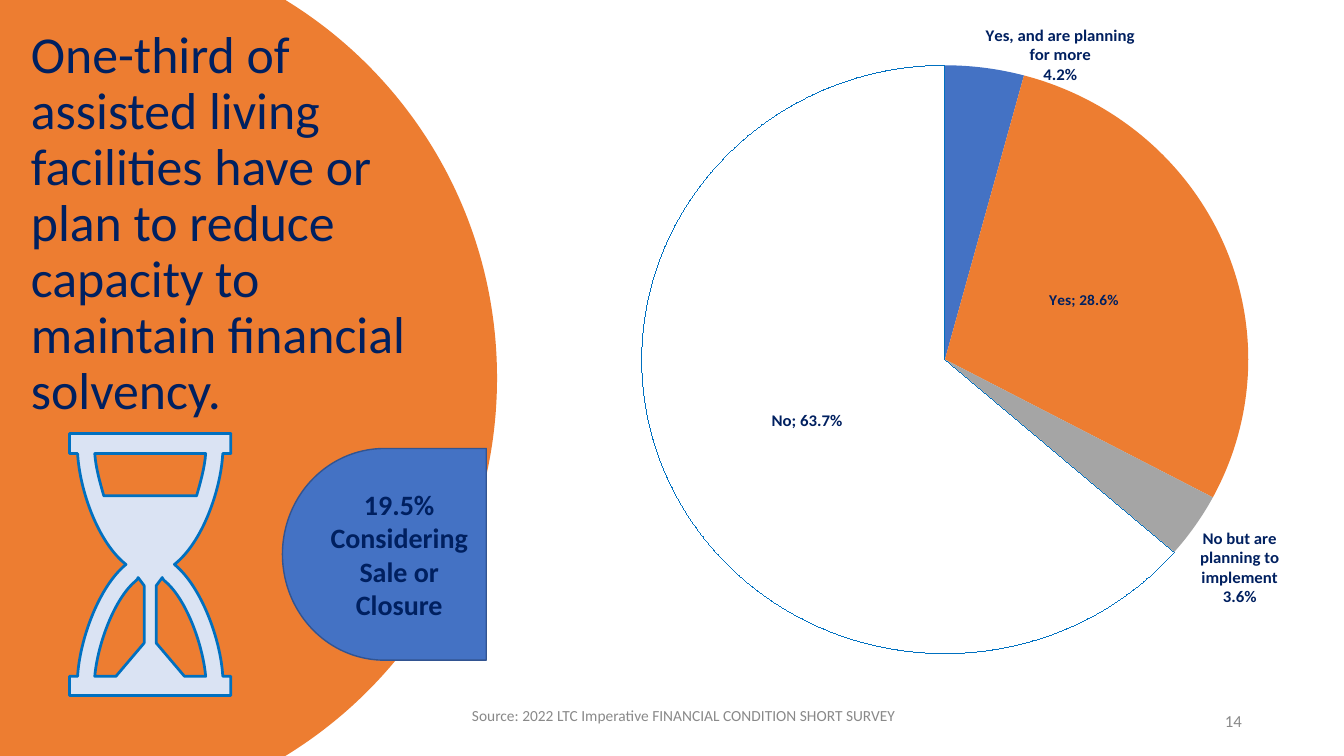
from lxml import etree
from pptx import Presentation
from pptx.chart.data import CategoryChartData
from pptx.dml.color import RGBColor
from pptx.enum.chart import XL_CHART_TYPE, XL_LABEL_POSITION
from pptx.enum.shapes import MSO_SHAPE
from pptx.enum.text import MSO_ANCHOR, MSO_AUTO_SIZE, PP_ALIGN
from pptx.oxml import parse_xml
from pptx.oxml.ns import nsdecls, qn
from pptx.util import Inches, Pt

WIDE, HIGH = Inches(13.33), Inches(7.5)
UNIT = Inches(0.01)
NAVY, ORANGE, BLUE, GRAY = "002060", "ED7D31", "4472C4", "A5A5A5"
EDGE, PALE, DIM = "0070C0", "DAE3F3", "898989"
OUT, MID = XL_LABEL_POSITION.OUTSIDE_END, XL_LABEL_POSITION.CENTER

# category, share, fill, label place, separator, label size
SLICES = [
    ("Yes, and are planning for more", 0.042, BLUE, OUT, "\n", 12),
    ("Yes", 0.286, ORANGE, MID, "; ", 11),
    ("No but are planning to implement", 0.036, GRAY, OUT, "\n", 12),
    ("No", 0.637, None, MID, "; ", 12),
]


def area(left, top, width, height):
    """Turn percentages of the slide into lengths."""
    return (int(WIDE * left / 100), int(HIGH * top / 100),
            int(WIDE * width / 100), int(HIGH * height / 100))


def tint(target, color):
    """Colour a fill or a font; None leaves a fill empty."""
    if color is None:
        target.background()
        return
    if hasattr(target, "solid"):
        target.solid()
        target = target.fore_color
    else:
        target = target.color
    target.rgb = RGBColor.from_string(color)


def style(font, size, color, bold=False):
    font.name, font.size, font.bold = "Calibri", Pt(size), bold
    tint(font, color)


def paint(shape, fill, line=None, width=1):
    shape.shadow.inherit = False
    tint(shape.fill, fill)
    tint(shape.line.fill, line)
    if line:
        shape.line.width = Pt(width)


def write(shape, text, size, color, align=PP_ALIGN.LEFT, bold=False, after=0):
    frame = shape.text_frame
    frame.text = text
    frame.word_wrap = True
    frame.auto_size = MSO_AUTO_SIZE.NONE
    frame.vertical_anchor = MSO_ANCHOR.MIDDLE
    para = frame.paragraphs[0]
    para.alignment, para.space_after = align, Pt(after)
    style(para.runs[0].font, size, color, bold)
    return para


def trace(*steps):
    """List (x, y, is handle); a step of six numbers is a cubic curve."""
    points = []
    for step in steps:
        last = len(step) - 2
        points += [(step[i], step[i + 1], i < last) for i in range(0, last + 1, 2)]
    return points


def mirror(points):
    return [(-x, y, bend) for x, y, bend in reversed(points)]


def curve(shape, bends):
    """Merge each pair of handles and the point after it into one curve."""
    route = next(shape.element.iter(qn("a:path")))
    nodes = [n for n in route if n.tag != qn("a:close")]
    bow = None
    for node, bend, prior in zip(nodes, bends, [False] + bends):
        if bend and not prior:
            bow = etree.Element(qn("a:cubicBezTo"))
            node.addprevious(bow)
        if bend or prior:
            bow.append(node[0])
            route.remove(node)


def outline(slide, loops, left=0, top=0):
    pen = None
    for loop in loops:
        spots = [(x * UNIT, y * UNIT) for x, y, _ in loop]
        if pen:
            pen.move_to(*spots[0])
        else:
            pen = slide.shapes.build_freeform(*spots[0], scale=1.0)
        pen.add_line_segments(spots[1:], close=True)
    shape = pen.convert_to_shape(left * UNIT, top * UNIT)
    curve(shape, [bend for loop in loops for _, _, bend in loop])
    return shape


def disc(slide):
    edge = trace((0, 0), (282, 0), (283, 0), (409, 77, 493, 216, 493, 375),
                 (493, 534, 409, 673, 283, 750), (282, 750), (0, 750))
    paint(outline(slide, [edge]), ORANGE)


def glass(slide):
    frame = trace((80, 0), (80, 20), (72, 20),
                  (70, 56, 52, 108, 24, 130), (51, 152, 70, 205, 72, 241),
                  (80, 241), (80, 260))
    upper = trace((55, 20), (54, 34, 50, 48, 46, 62))
    lower = trace((55, 241), (34, 241), (6, 208), (6, 151), (12, 143),
                  (12, 144, 13, 145, 14, 146), (35, 163, 52, 208, 55, 241))
    loops = [frame + mirror(frame), upper + mirror(upper), lower, mirror(lower)]
    paint(outline(slide, loops, 149, 430), PALE, EDGE, 1.95)


def badge(slide, text):
    shape = slide.shapes.add_shape(MSO_SHAPE.FLOWCHART_DELAY,
                                   *area(21.02, 59.33, 15.17, 28))
    shape.element.spPr.find(qn("a:xfrm")).set("flipH", "1")
    paint(shape, BLUE, "325491")
    write(shape, text, 20, NAVY, PP_ALIGN.CENTER, bold=True)


def note(slide, text, size, box, align=PP_ALIGN.LEFT):
    write(slide.shapes.add_textbox(*area(*box)), text, size, DIM, align, after=6)


def label(point, place, gap, size):
    tag = point.data_label
    style(tag.font, size, NAVY, bold=True)
    tag.position = place
    node = next(n for n in point._ser.iter(qn("c:dLbl"))
                if n.find(qn("c:idx")).get("val") == str(point._idx))
    node.insert(1, parse_xml(
        f'<c:numFmt {nsdecls("c")} formatCode="0.0%" sourceLinked="0"/>'))
    node.find(qn("c:showCatName")).set("val", "1")
    etree.SubElement(node, qn("c:separator")).text = gap


def frame_plot(chart, **sides):
    """Fix the inner plot area at shares of the chart."""
    plot = chart.element.find(".//" + qn("c:plotArea"))
    for old in plot.findall(qn("c:layout")):
        plot.remove(old)
    rows = "".join(f'<c:{k} val="{v}"/>' for k, v in sides.items())
    plot.insert(0, parse_xml(
        f'<c:layout {nsdecls("c")}><c:manualLayout><c:layoutTarget val="inner"/>'
        f'<c:xMode val="edge"/><c:yMode val="edge"/>{rows}'
        '</c:manualLayout></c:layout>'))


def pie(slide):
    data = CategoryChartData(number_format="0.0%")
    data.categories = [row[0] for row in SLICES]
    data.add_series("Series 1", [row[1] for row in SLICES])
    chart = slide.shapes.add_chart(XL_CHART_TYPE.PIE,
                                   *area(36.23, 0.53, 63.17, 98.67), data).chart
    chart.has_legend = chart.has_title = False
    style(chart.font, 10, "000000")
    frame_plot(chart, x=0.105, y=0.054, w=0.921, h=0.813)
    points = chart.plots[0].series[0].points
    for i, (_, _, fill, place, gap, size) in enumerate(SLICES):
        look = points[i].format
        tint(look.fill, fill)
        tint(look.line.fill, None if fill else EDGE)
        label(points[i], place, gap, size)


def main():
    deck = Presentation()
    deck.slide_width, deck.slide_height = WIDE, HIGH
    slide = deck.slides.add_slide(deck.slide_layouts[5])
    disc(slide)
    title = slide.shapes.title
    title.left, title.top, title.width, title.height = area(1.55, 1.6, 33.08, 56.27)
    slide.shapes._spTree.append(title.element)
    para = write(title, "One-third of assisted living facilities have or plan to "
                 "reduce capacity to maintain financial solvency.", 37, NAVY)
    para.line_spacing, para.space_before = 0.9, Pt(0)
    note(slide, "Source: 2022 LTC Imperative FINANCIAL CONDITION SHORT SURVEY",
         11, (34.38, 92, 36.98, 5.33))
    note(slide, "14", 12, (70.65, 92.67, 22.5, 5.33), PP_ALIGN.RIGHT)
    glass(slide)
    badge(slide, "19.5% Considering Sale or Closure")
    pie(slide)
    deck.save("out.pptx")


if __name__ == "__main__":
    main()
